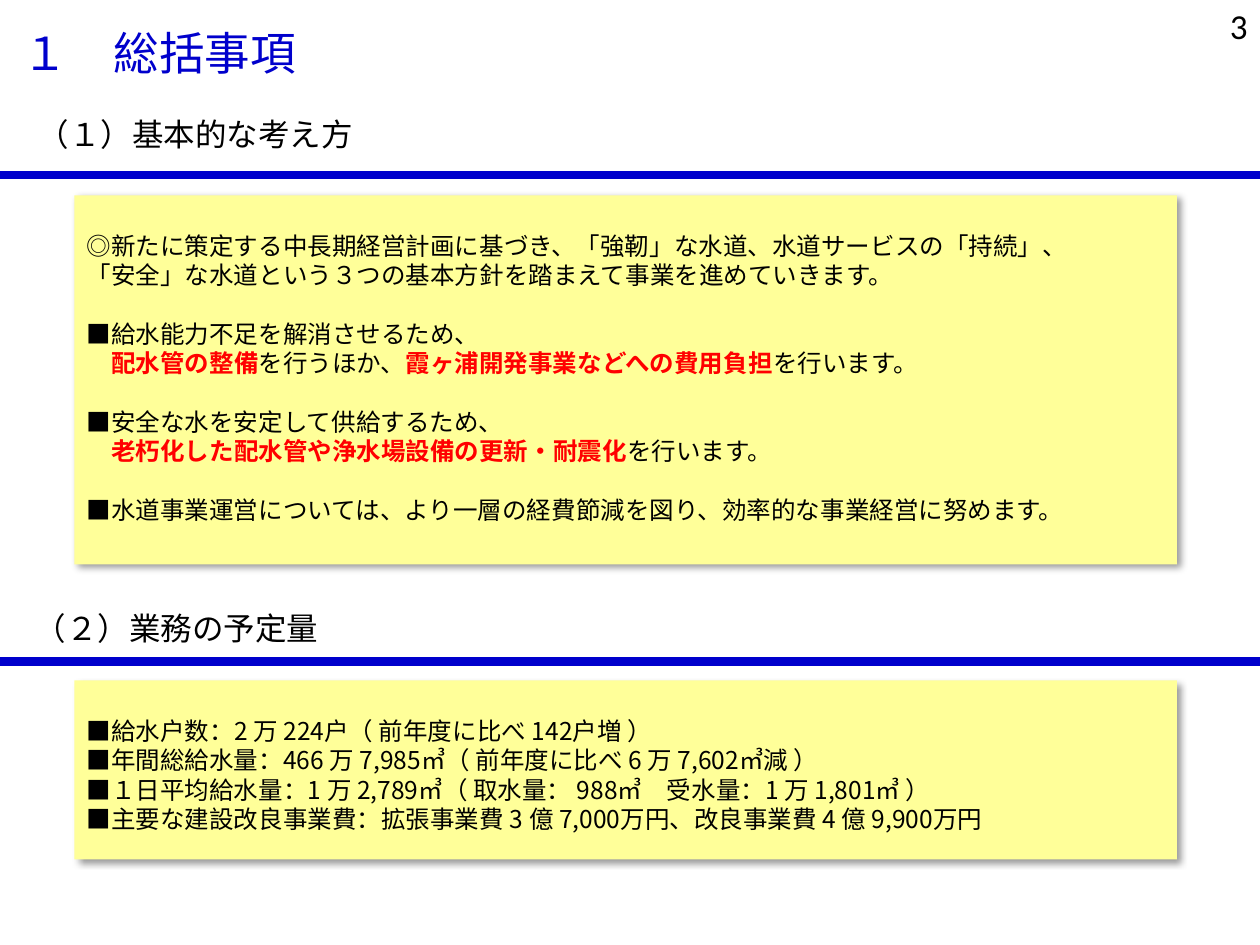
from lxml.etree import SubElement
from pptx import Presentation
from pptx.dml.color import RGBColor
from pptx.enum.shapes import MSO_CONNECTOR, MSO_SHAPE
from pptx.enum.text import MSO_ANCHOR, PP_ALIGN
from pptx.oxml import parse_xml
from pptx.oxml.ns import nsdecls, qn
from pptx.util import Inches, Pt

BLUE = RGBColor(0x00, 0x00, 0xCC)
BLACK = RGBColor(0x00, 0x00, 0x00)
RED = RGBColor(0xFF, 0x00, 0x00)
YELLOW = RGBColor(0xFF, 0xFF, 0x99)
FONT = "Noto Sans CJK JP"
LINE = Pt(16.8)
SHADOW = f"""<a:effectLst {nsdecls('a')}>
  <a:outerShdw blurRad="50800" dist="38100" dir="2700000" algn="tl" rotWithShape="0">
    <a:srgbClr val="000000"><a:alpha val="40000"/></a:srgbClr>
  </a:outerShdw>
</a:effectLst>"""


def style(r, size, color, bold=False, font=FONT):
    r.font.size = Pt(size)
    r.font.color.rgb = color
    r.font.bold = bold
    r.font.name = font
    SubElement(r._r.get_or_add_rPr(), qn("a:ea")).set("typeface", font)


def set_line(sp, text, size, color, anchor=MSO_ANCHOR.BOTTOM, align=PP_ALIGN.LEFT, font=FONT):
    tf = sp.text_frame
    tf.word_wrap = True
    tf.vertical_anchor = anchor
    tf.text = text
    p = tf.paragraphs[0]
    p.alignment = align
    style(p.runs[0], size, color, font=font)


prs = Presentation()
prs.slide_width, prs.slide_height = Inches(10), Inches(7.5)
s = prs.slides.add_slide(prs.slide_layouts[5])

title = s.shapes.title
title.left, title.top, title.width, title.height = Inches(0.2), Inches(0.84), Inches(3.68), Inches(0.42)
set_line(title, "（１）基本的な考え方", 18, BLACK)

chapter = s.shapes.add_textbox(Inches(0), Inches(0.04), Inches(7.44), Inches(0.64))
set_line(chapter, " １　総括事項", 26, BLUE)

section = s.shapes.add_textbox(Inches(0.12), Inches(4.54), Inches(7.44), Inches(0.64))
set_line(section, " （２）業務の予定量", 18, BLACK)

number = s.shapes.add_textbox(Inches(7.67), Inches(0), Inches(2.33), Inches(0.4))
set_line(number, "3", 20, BLACK, MSO_ANCHOR.MIDDLE, PP_ALIGN.RIGHT, "Calibri")

for y in (1.39, 5.25):
    rule = s.shapes.add_connector(MSO_CONNECTOR.STRAIGHT, Inches(0), Inches(y), Inches(10), Inches(y))
    rule.line.color.rgb = BLUE
    rule.line.width = Pt(5)
    SubElement(rule._element.spPr, qn("a:effectLst"))

policy = [
    ["◎新たに策定する中長期経営計画に基づき、「強靭」な水道、水道サービスの「持続」、"],
    ["「安全」な水道という３つの基本方針を踏まえて事業を進めていきます。"],
    ["■給水能力不足を解消させるため、"],
    ["　", "配水管の整備", "を行うほか、", "霞ヶ浦開発事業などへの費用負担", "を行います。"],
    ["■安全な水を安定して供給するため、"],
    ["　", "老朽化した配水管や浄水場設備の更新・耐震化", "を行います。"],
    ["■水道事業運営については、より一層の経費節減を図り、効率的な事業経営に努めます。"],
]
volumes = [
    ["■給水戸数：2 万 224戸（ 前年度に比べ 142戸増 ）"],
    ["■年間総給水量：466 万 7,985㎥（ 前年度に比べ 6 万 7,602㎥減 ）"],
    ["■１日平均給水量：1 万 2,789㎥（ 取水量： 988㎥　受水量：1 万 1,801㎥ ）"],
    ["■主要な建設改良事業費：拡張事業費 3 億 7,000万円、改良事業費 4 億 9,900万円"],
]

for top, height, lines, spaced in ((1.55, 2.93, policy, True), (5.4, 1.42, volumes, False)):
    sp = s.shapes.add_shape(MSO_SHAPE.RECTANGLE, Inches(0.59), Inches(top), Inches(8.75), Inches(height))
    sp.fill.solid()
    sp.fill.fore_color.rgb = YELLOW
    sp.line.fill.background()
    sp._element.spPr.append(parse_xml(SHADOW))
    tf = sp.text_frame
    tf.word_wrap = True
    tf.vertical_anchor = MSO_ANCHOR.TOP
    tf.margin_top = Inches(0.28)
    for i, parts in enumerate(lines):
        p = tf.paragraphs[0] if i == 0 else tf.add_paragraph()
        p.alignment = PP_ALIGN.LEFT
        p.line_spacing = LINE
        if spaced and i and parts[0].startswith("■"):
            p.space_before = LINE
        for j, text in enumerate(parts):
            r = p.add_run()
            r.text = text
            emphasis = j % 2 == 1
            style(r, 14, RED if emphasis else BLACK, emphasis)

prs.save("out.pptx")
